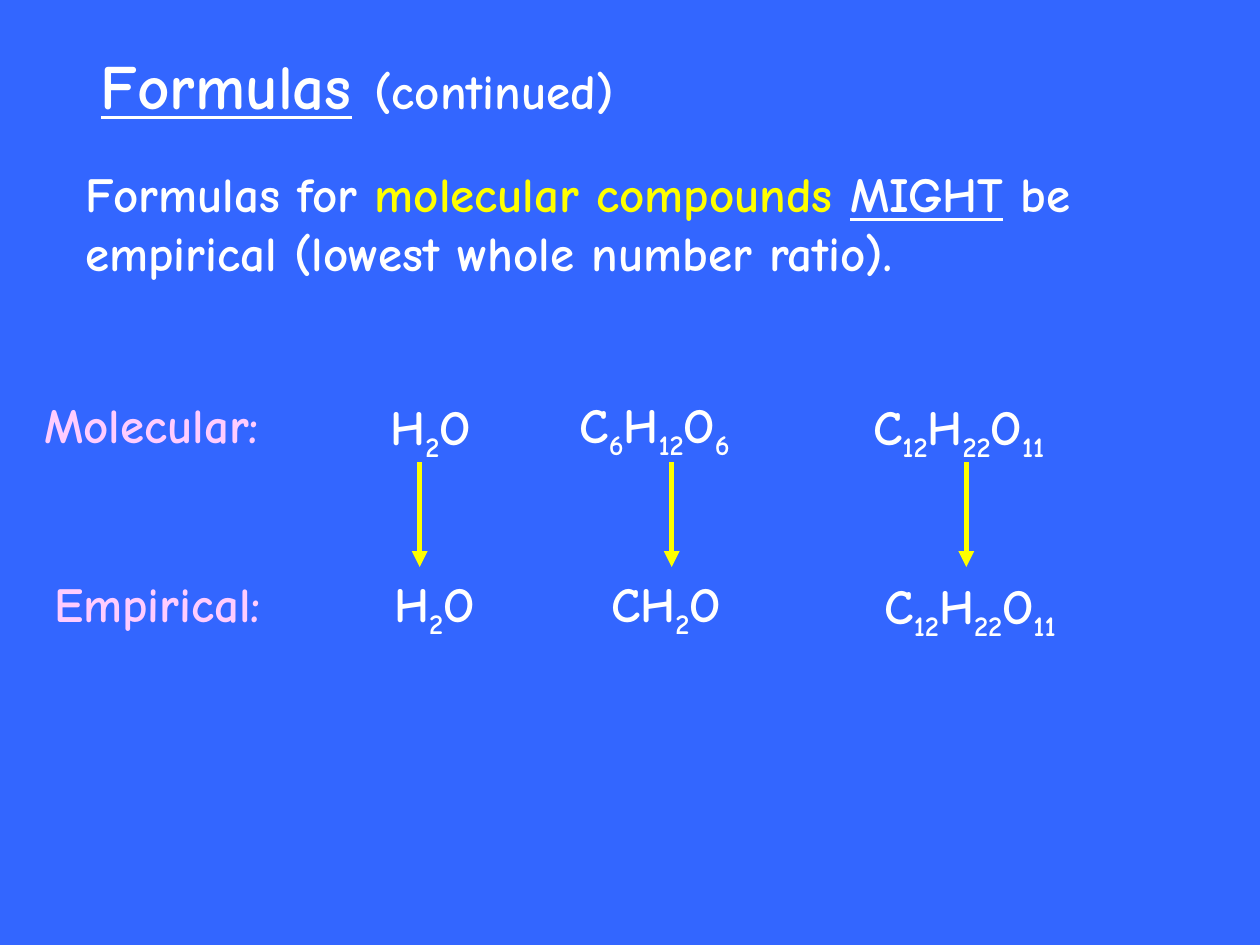
"""Build a chemistry slide that pairs molecular formulas with empirical ones."""
from itertools import groupby

from lxml import etree
from pptx import Presentation
from pptx.dml.color import RGBColor
from pptx.enum.shapes import MSO_CONNECTOR
from pptx.enum.text import MSO_ANCHOR, MSO_AUTO_SIZE, PP_ALIGN
from pptx.oxml.ns import qn
from pptx.util import Cm, Pt

STRAIGHT = MSO_CONNECTOR.STRAIGHT
MIDDLE = MSO_ANCHOR.MIDDLE
FIXED = MSO_AUTO_SIZE.NONE
GROW = MSO_AUTO_SIZE.SHAPE_TO_FIT_TEXT
CENTER = PP_ALIGN.CENTER

BLUE = RGBColor(0x33, 0x66, 0xFF)
WHITE = RGBColor(0xFF, 0xFF, 0xFF)
YELLOW = RGBColor(0xFF, 0xFF, 0x00)
PINK = RGBColor(0xFF, 0xCC, 0xFF)

FONT = "Comic Neue"
LINE_HEIGHT = 1.45
ARROW_TOP, ARROW_BOTTOM = 9.32, 11.43

LABELS = [("Molecular:", 0.64, 7.82, 5.46), ("Empirical:", 0.85, 11.43, 5.21)]
FORMULAS = [
    ("H2O", 7.62, 7.87, 2.46),
    ("C6H12O6", 11.43, 7.82, 4.32),
    ("C12H22O11", 17.35, 7.87, 5.13),
    ("H2O", 7.7, 11.43, 2.46),
    ("CH2O", 12.07, 11.43, 3.07),
    ("C12H22O11", 17.58, 11.48, 5.13),
]
ARROW_LEFTS = [8.46, 13.54, 19.48]


def write(para, text, size=28, color=WHITE, underline=False, subscript=False):
    """Add one formatted run to a paragraph."""
    span = para.add_run()
    span.text = text
    font = span.font
    font.name, font.size, font.bold = FONT, Pt(size), True
    font.underline = underline
    font.color.rgb = color
    if subscript:
        font._element.set("baseline", "-25000")


class Composer:
    """Hold the deck style and the current page."""

    def __init__(self, deck):
        """Open a blue page that has a title."""
        self.page = deck.slides.add_slide(deck.slide_layouts[5])
        fill = self.page.background.fill
        fill.solid()
        fill.fore_color.rgb = BLUE

    def title(self, left, top, width, height):
        """Place the title placeholder and return its paragraph."""
        box = self.page.shapes.title
        box.left, box.top, box.width, box.height = map(Cm, (left, top, width, height))
        frame = box.text_frame
        frame.auto_size, frame.vertical_anchor = FIXED, MIDDLE
        para = frame.paragraphs[0]
        para.alignment = CENTER
        return para

    def text(self, left, top, width, height=LINE_HEIGHT, wrap=False):
        """Add a text box and return its paragraph."""
        box = self.page.shapes.add_textbox(*map(Cm, (left, top, width, height)))
        frame = box.text_frame
        frame.word_wrap, frame.auto_size = wrap, GROW
        return frame.paragraphs[0]

    def formula(self, symbols, left, top, width):
        """Add a chemical formula with its digits as subscripts."""
        para = self.text(left, top, width)
        for is_digit, characters in groupby(symbols, str.isdigit):
            write(para, "".join(characters), subscript=is_digit)

    def arrow(self, left):
        """Add an arrow down from the molecular to the empirical row."""
        arrow = self.page.shapes.add_connector(
            STRAIGHT, Cm(left), Cm(ARROW_TOP), Cm(left), Cm(ARROW_BOTTOM))
        arrow.line.color.rgb = YELLOW
        arrow.line.width = Pt(3)
        properties = arrow._element.spPr
        etree.SubElement(properties.find(qn("a:ln")), qn("a:tailEnd"), type="triangle")
        etree.SubElement(properties, qn("a:effectLst"))


def main():
    """Compose the page and save the deck."""
    deck = Presentation()
    deck.slide_width, deck.slide_height = Cm(25.4), Cm(19.05)
    composer = Composer(deck)

    heading = composer.title(0.85, 0.64, 12.7, 2.12)
    write(heading, "Formulas", size=36, underline=True)
    write(heading, " ", size=36)
    write(heading, "(continued)")

    statement = composer.text(1.47, 3.18, 22.23, 2.62, wrap=True)
    write(statement, "Formulas for ")
    write(statement, "molecular compounds ", color=YELLOW)
    write(statement, "MIGHT", underline=True)
    write(statement, " be empirical (lowest whole number ratio).")

    for label, left, top, width in LABELS:
        write(composer.text(left, top, width), label, color=PINK)
    for formula in FORMULAS:
        composer.formula(*formula)
    for left in ARROW_LEFTS:
        composer.arrow(left)

    deck.save("out.pptx")


if __name__ == "__main__":
    main()
